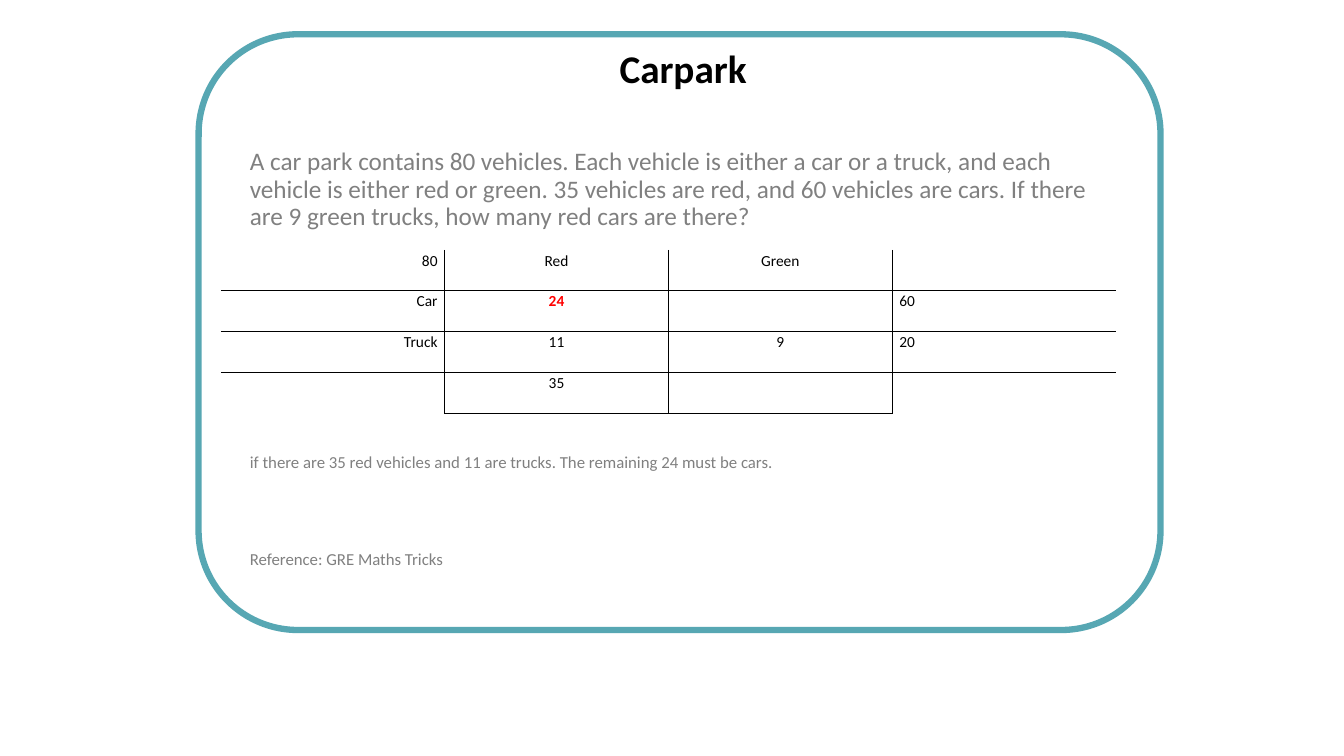
from lxml.etree import SubElement
from pptx import Presentation
from pptx.dml.color import RGBColor
from pptx.enum.shapes import MSO_SHAPE
from pptx.enum.text import PP_ALIGN
from pptx.oxml.ns import qn
from pptx.util import Inches, Pt

COLORS = {"frame": "57A7B3", "ink": "000000", "body": "808080", "answer": "FF0000"}
TITLE = ("Carpark", (2.19, 0.39, 9.17, 0.61))
BODY = [
    ("A car park contains 80 vehicles. Each vehicle is either a car or a truck, "
     "and each vehicle is either red or green. 35 vehicles are red, and 60 vehicles "
     "are cars. If there are 9 green trucks, how many red cars are there?",
     18, (2.38, 1.43, 8.56, 0.95)),
    ("if there are 35 red vehicles and 11 are trucks. The remaining 24 must be cars.",
     12, (2.38, 4.46, 8.56, 0.3)),
    ("Reference: GRE Maths Tricks", 12, (2.38, 5.42, 8.56, 0.3)),
]
GRID = [
    ["80", "Red", "Green", ""],
    ["Car", "24", "", "60"],
    ["Truck", "11", "9", "20"],
    ["", "35", "", ""],
]
ANSWER = (1, 1)
ALIGNS = [PP_ALIGN.RIGHT, PP_ALIGN.CENTER, PP_ALIGN.CENTER, PP_ALIGN.LEFT]
TABLE_LEFT, TABLE_TOP, COLUMN_WIDTH, ROW_HEIGHT = 2.19, 2.48, 2.22, 0.405


def write(frame, text, size, color, bold=False, align=PP_ALIGN.LEFT, spacing=1.0):
    """Put one formatted paragraph in a text frame."""
    para = frame.paragraphs[0]
    para.alignment = align
    para.line_spacing = spacing
    para.font.size = Pt(size)
    if text:
        span = para.add_run()
        span.text = text
        span.font.name = "Calibri"
        span.font.size = Pt(size)
        span.font.bold = bold
        span.font.color.rgb = RGBColor.from_string(COLORS[color])


def add_text(page, text, place, **style):
    """Add a wrapping text box."""
    box = page.shapes.add_textbox(*map(Inches, place))
    box.text_frame.word_wrap = True
    write(box.text_frame, text, **style)


def set_borders(cell, sides):
    """Draw the given sides of a cell and clear the others."""
    properties = cell._tc.get_or_add_tcPr()
    for side in "LRTB":
        line = SubElement(properties, qn(f"a:ln{side}"), w=str(Pt(1)))
        if side in sides:
            fill = SubElement(line, qn("a:solidFill"))
            SubElement(fill, qn("a:srgbClr"), val=COLORS["ink"])
        else:
            SubElement(line, qn("a:noFill"))


def add_grid(page):
    """Add the two-way table with its inner rules and closed totals."""
    rows, columns = len(GRID), len(GRID[0])
    table = page.shapes.add_table(
        rows, columns, Inches(TABLE_LEFT), Inches(TABLE_TOP),
        Inches(columns * COLUMN_WIDTH), Inches(rows * ROW_HEIGHT)).table
    table.first_row = table.horz_banding = False
    for row, values in enumerate(GRID):
        for column, value in enumerate(values):
            cell = table.cell(row, column)
            cell.margin_left = cell.margin_right = Inches(0.07)
            cell.margin_top = cell.margin_bottom = 0
            inner = 0 < column < columns - 1
            drawn = {"L": column > 0, "R": column < columns - 1,
                     "T": row > 0, "B": row < rows - 1 or inner}
            set_borders(cell, [side for side, shown in drawn.items() if shown])
            cell.fill.background()
            found = (row, column) == ANSWER
            write(cell.text_frame, value, 11, "answer" if found else "ink",
                  bold=found, align=ALIGNS[column], spacing=1.07)


def main():
    """Build the slide and save it."""
    deck = Presentation()
    deck.slide_width, deck.slide_height = Inches(13.33), Inches(7.5)
    page = deck.slides.add_slide(deck.slide_layouts[6])
    frame = page.shapes.add_shape(
        MSO_SHAPE.ROUNDED_RECTANGLE, *map(Inches, (1.97, 0.34, 9.54, 5.91)))
    frame.shadow.inherit = False
    frame.fill.background()
    frame.line.color.rgb = RGBColor.from_string(COLORS["frame"])
    frame.line.width = Pt(4.5)
    title, place = TITLE
    add_text(page, title, place, size=28, color="ink", bold=True, align=PP_ALIGN.CENTER)
    for text, size, place in BODY:
        add_text(page, text, place, size=size, color="body", spacing=0.9)
    add_grid(page)
    deck.save("out.pptx")


if __name__ == "__main__":
    main()
